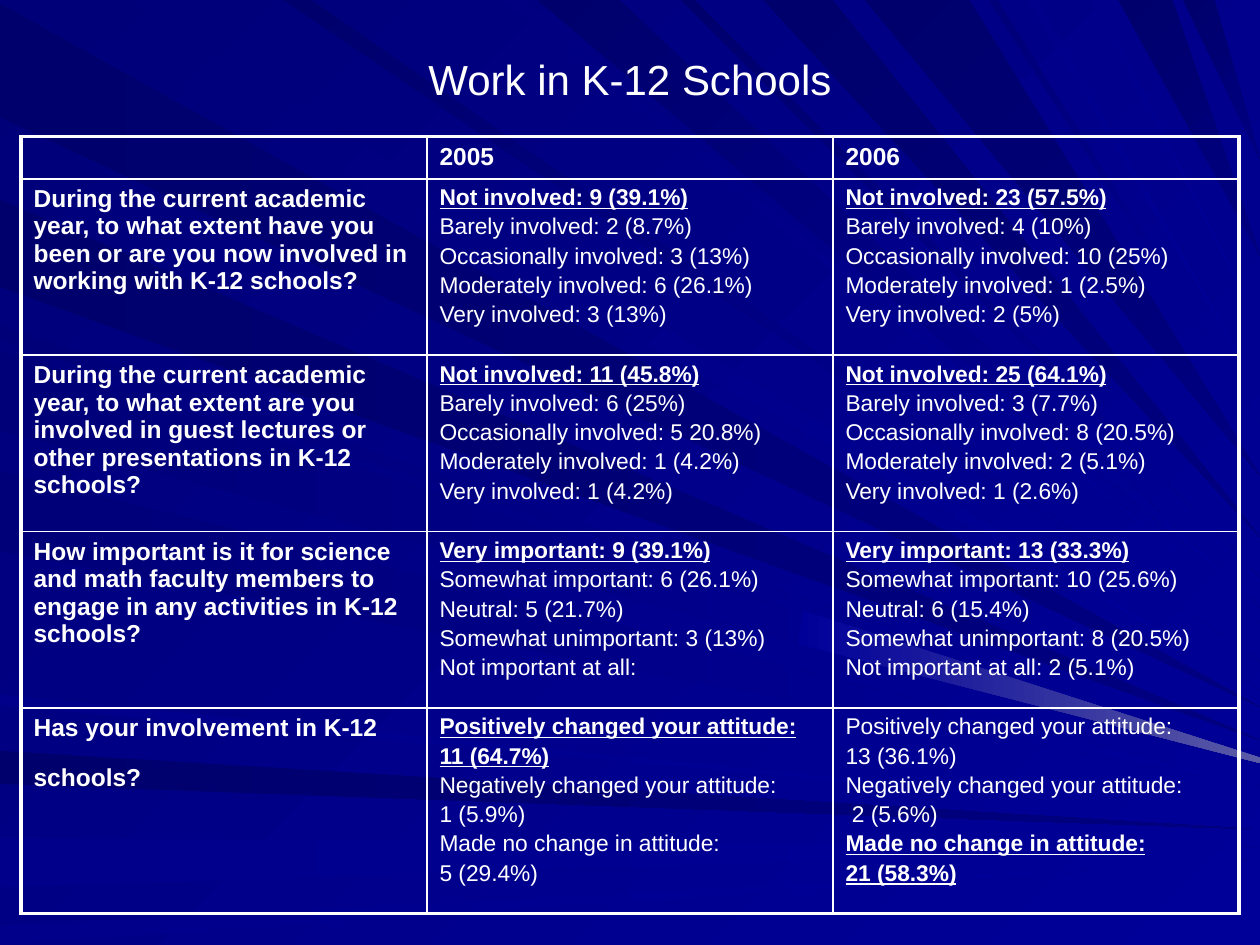
from lxml.etree import SubElement
from pptx import Presentation
from pptx.dml.color import RGBColor
from pptx.enum.text import MSO_ANCHOR, PP_ALIGN
from pptx.oxml.ns import qn
from pptx.util import Pt

WHITE = RGBColor(0xFF, 0xFF, 0xFF)
DARK = RGBColor(0, 0, 0x6D)
NIGHT = RGBColor(0, 0, 0x78)
DEEP = RGBColor(0, 0, 0x80)
SOFT = RGBColor(0, 0, 0x8A)
BRIGHT = RGBColor(0, 0, 0x99)
GLOW = RGBColor(0x5A, 0x5A, 0xA6)

FONT = "Arial"
THICK, THIN = 2.25, 1

# Where each ray starts and ends along its edge, in points, with its two colours
LEFT_RAYS = [
    (2, 67, DARK, DEEP), (429, 448, DARK, DEEP), (479, 507, SOFT, BRIGHT),
    (529, 540, SOFT, BRIGHT), (186, 194, NIGHT, BRIGHT), (114, 164, DARK, DEEP),
    (200, 246, NIGHT, BRIGHT), (269, 315, NIGHT, BRIGHT), (397, 403, SOFT, BRIGHT),
]
TOP_RAYS = [
    (19, 73, NIGHT, BRIGHT), (287, 300, DEEP, BRIGHT), (307, 354, DARK, BRIGHT),
    (389, 397, DARK, BRIGHT), (436, 476, DARK, DEEP), (639, 670, DARK, DEEP),
    (676, 694, DARK, DEEP), (162, 178, DARK, BRIGHT), (494, 554, DARK, DEEP),
    (565, 570, NIGHT, BRIGHT), (587, 593, SOFT, BRIGHT), (623, 628, SOFT, BRIGHT),
]

INVOLVEMENT = ["Not involved", "Barely involved", "Occasionally involved",
               "Moderately involved", "Very involved"]
IMPORTANCE = ["Very important", "Somewhat important", "Neutral",
              "Somewhat unimportant", "Not important at all"]
ATTITUDE = ["Positively changed your attitude:", "Negatively changed your attitude:",
            "Made no change in attitude:"]


def rated(labels, values):
    return [f"{label}: {value}".strip() for label, value in zip(labels, values)]


def attitudes(values):
    """Put each value on a line of its own, under its label."""
    return [line for pair in zip(ATTITUDE, values) for line in pair]


# Question, answer lines for each year, and for each year the numbers of the stressed lines
SURVEY = [
    ("During the current academic year, to what extent have you been or are you now "
     "involved in working with K-12 schools?",
     rated(INVOLVEMENT, ["9 (39.1%)", "2 (8.7%)", "3 (13%)", "6 (26.1%)", "3 (13%)"]),
     rated(INVOLVEMENT, ["23 (57.5%)", "4 (10%)", "10 (25%)", "1 (2.5%)", "2 (5%)"]),
     [{0}, {0}]),
    ("During the current academic year, to what extent are you involved in guest "
     "lectures or other presentations in K-12 schools?",
     rated(INVOLVEMENT, ["11 (45.8%)", "6 (25%)", "5 20.8%)", "1 (4.2%)", "1 (4.2%)"]),
     rated(INVOLVEMENT, ["25 (64.1%)", "3 (7.7%)", "8 (20.5%)", "2 (5.1%)", "1 (2.6%)"]),
     [{0}, {0}]),
    ("How important is it for science and math faculty members to engage in any "
     "activities in K-12 schools?",
     rated(IMPORTANCE, ["9 (39.1%)", "6 (26.1%)", "5 (21.7%)", "3 (13%)", ""]),
     rated(IMPORTANCE, ["13 (33.3%)", "10 (25.6%)", "6 (15.4%)", "8 (20.5%)", "2 (5.1%)"]),
     [{0}, {0}]),
    ("Has your involvement in K-12 schools?",
     attitudes(["11 (64.7%)", "1 (5.9%)", "5 (29.4%)"]),
     attitudes(["13 (36.1%)", " 2 (5.6%)", "21 (58.3%)"]),
     [{0, 1}, {4, 5}]),
]


def fill_gradient(fill, first, last, angle):
    """Run the gradient from first to last; the angle turns clockwise."""
    fill.gradient()
    fill.gradient_angle = (360 - angle) % 360
    for stop, colour in zip(fill.gradient_stops, (first, last)):
        stop.color.rgb = colour


def draw_ray(page, corners, first, last, angle):
    builder = page.shapes.build_freeform(*corners[0], scale=Pt(1))
    builder.add_line_segments(corners[1:], close=True)
    ray = builder.convert_to_shape()
    ray.shadow.inherit = False
    ray.line.fill.background()
    fill_gradient(ray.fill, first, last, angle)


def draw_backdrop(page, width):
    """Aim all rays at one vanishing point and end them at the right edge."""
    vanish_x, vanish_y = 871, 482
    fill_gradient(page.background.fill, NIGHT, BRIGHT, 45)
    for start, end, first, last in LEFT_RAYS:
        middle = (start + end) / 2
        tip = middle + (vanish_y - middle) * width / vanish_x
        draw_ray(page, [(0, start), (0, end), (width, tip)], first, last, 0)
    for start, end, first, last in TOP_RAYS:
        middle = (start + end) / 2
        tip = vanish_y * (width - middle) / (vanish_x - middle)
        draw_ray(page, [(start, 0), (end, 0), (width, tip)], first, last, 45)
    draw_ray(page, [(456, 368), (459, 349), (width, 433), (width, 436)], BRIGHT, GLOW, 0)


def add_span(para, text, size, **format_values):
    span = para.add_run()
    span.text = text
    span.font.color.rgb = WHITE
    for name, value in {"name": FONT, "size": Pt(size), **format_values}.items():
        setattr(span.font, name, value)


def draw_title(page, left, top, width, height):
    box = page.shapes.add_textbox(Pt(left), Pt(top), Pt(width), Pt(height))
    frame = box.text_frame
    frame.word_wrap = True
    frame.vertical_anchor = MSO_ANCHOR.MIDDLE
    frame.paragraphs[0].alignment = PP_ALIGN.CENTER
    add_span(frame.paragraphs[0], "Work in K-12 Schools", 24)


def set_borders(cell, widths):
    for side, width in widths.items():
        line = SubElement(cell._tc.get_or_add_tcPr(), qn(f"a:ln{side}"), w=str(Pt(width)))
        colour = SubElement(SubElement(line, qn("a:solidFill")), qn("a:srgbClr"))
        colour.set("val", str(WHITE))


def write_heading(cell, text):
    add_span(cell.text_frame.paragraphs[0], text, 14, bold=True)


def write_answers(cell, lines, stressed):
    frame = cell.text_frame
    for number, line in enumerate(lines):
        para = frame.add_paragraph() if number else frame.paragraphs[0]
        if number:
            para.space_before = Pt(2.2)
        strong = number in stressed
        add_span(para, line, 13, bold=strong, underline=strong)


def draw_survey(page, left, top, width, row_heights):
    rows, columns = len(row_heights), 3
    table = page.shapes.add_table(rows, columns, Pt(left), Pt(top), Pt(width),
                                  Pt(sum(row_heights))).table
    table.first_row = table.horz_banding = False
    for row, height in zip(table.rows, row_heights):
        row.height = Pt(height)
    for column in table.columns:
        column.width = Pt(width / columns)

    for r in range(rows):
        for c in range(columns):
            cell = table.cell(r, c)
            set_borders(cell, {"L": THIN if c else THICK,
                               "R": THIN if c < columns - 1 else THICK,
                               "T": THIN if r else THICK,
                               "B": THIN if r < rows - 1 else THICK})
            cell.fill.background()

    corner = table.cell(0, 0).text_frame.paragraphs[0]
    corner._p.get_or_add_endParaRPr().set("sz", "1400")
    for c, year in enumerate(["2005", "2006"], start=1):
        write_heading(table.cell(0, c), year)
    for r, (question, *answers, stressed) in enumerate(SURVEY, start=1):
        write_heading(table.cell(r, 0), question)
        for c, (lines, numbers) in enumerate(zip(answers, stressed), start=1):
            write_answers(table.cell(r, c), lines, numbers)
    # A tall closing space sets the last line of the last question lower
    add_span(table.cell(rows - 1, 0).text_frame.paragraphs[0], " ", 28, bold=True)


def main():
    deck = Presentation()
    deck.slide_width, deck.slide_height = Pt(720), Pt(540)
    page = deck.slides.add_slide(deck.slide_layouts[6])
    draw_backdrop(page, 720)
    draw_title(page, 36, 18, 648, 54)
    draw_survey(page, 12, 78, 696, [24.2, 100.8, 100.8, 100.8, 117.4])
    deck.save("out.pptx")


if __name__ == "__main__":
    main()
